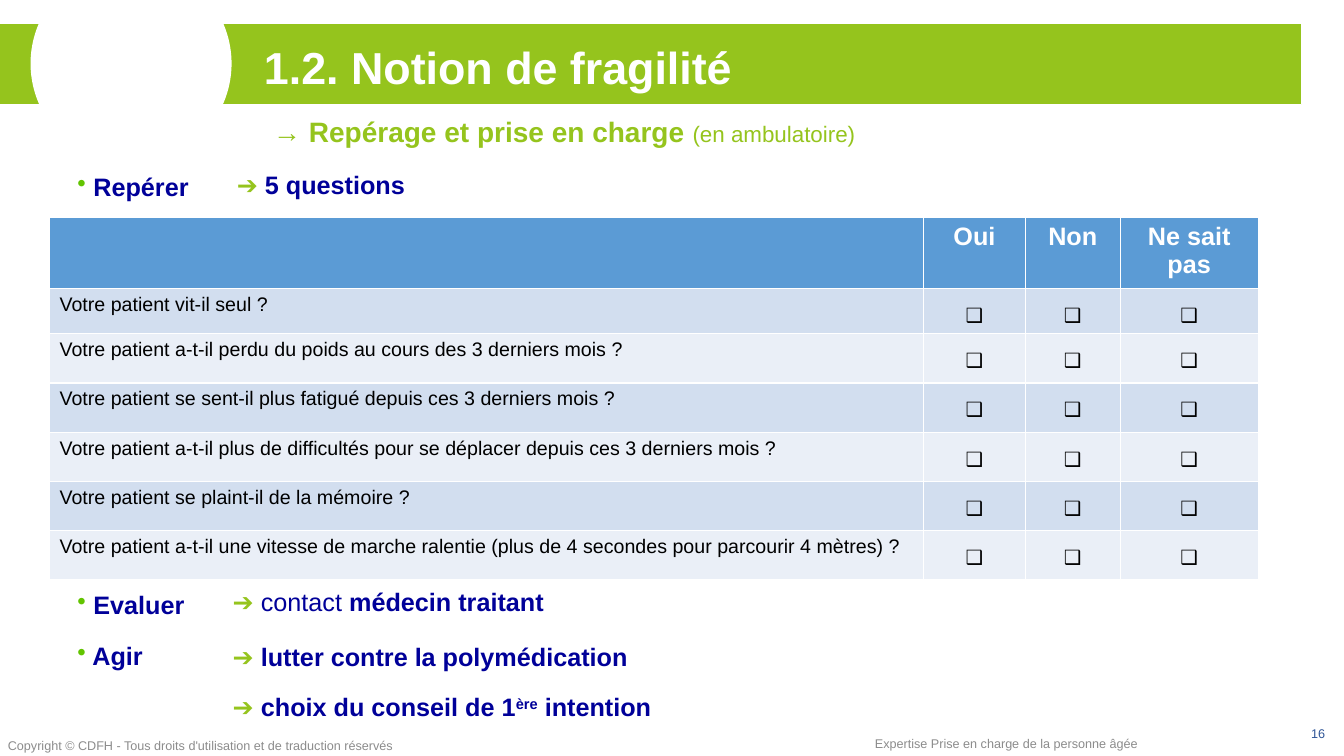
from pptx import Presentation
from pptx.dml.color import RGBColor
from pptx.enum.shapes import MSO_SHAPE
from pptx.enum.text import MSO_ANCHOR, PP_ALIGN
from pptx.oxml import parse_xml
from pptx.oxml.ns import nsdecls
from pptx.util import Inches, Pt

RECTANGLE, OVAL = MSO_SHAPE.RECTANGLE, MSO_SHAPE.OVAL
LEFT, CENTER, RIGHT = PP_ALIGN.LEFT, PP_ALIGN.CENTER, PP_ALIGN.RIGHT
TOP, MIDDLE = MSO_ANCHOR.TOP, MSO_ANCHOR.MIDDLE

WHITE = RGBColor(0xFF, 0xFF, 0xFF)
BLACK = RGBColor(0x00, 0x00, 0x00)
GREEN = RGBColor(0x95, 0xC4, 0x1D)
NAVY = RGBColor(0x00, 0x00, 0x99)
GREY = RGBColor(0x8C, 0x8C, 0x8C)
NUMBER_BLUE = RGBColor(0x2F, 0x55, 0x97)
HEADER_BLUE = RGBColor(0x5B, 0x9B, 0xD5)
ROW_BLUES = (RGBColor(0xD2, 0xDE, 0xEF), RGBColor(0xEA, 0xEF, 0xF7))
BULLET_GREEN = "62C400"

QUESTIONS = (
    "Votre patient vit-il seul ?",
    "Votre patient a-t-il perdu du poids au cours des 3 derniers mois ?",
    "Votre patient se sent-il plus fatigué depuis ces 3 derniers mois ?",
    "Votre patient a-t-il plus de difficultés pour se déplacer depuis ces 3 derniers mois ?",
    "Votre patient se plaint-il de la mémoire ?",
    "Votre patient a-t-il une vitesse de marche ralentie (plus de 4 secondes pour parcourir 4 mètres) ?",
)
ANSWERS = ("Oui", "Non", "Ne sait pas")
COLUMN_WIDTHS = (8.67, 1.01, 0.94, 1.37)
ROW_HEIGHTS = (0.48, 0.39, 0.49, 0.49, 0.49, 0.48, 0.49)


class SlideBuilder:
    """Draws styled elements on the current slide."""

    font_name = "Arial"

    def __init__(self, page):
        self.page = page

    def shape(self, kind, left, top, width, height, fill):
        shape = self.page.shapes.add_shape(
            kind, Inches(left), Inches(top), Inches(width), Inches(height))
        shape.shadow.inherit = False
        shape.fill.solid()
        shape.fill.fore_color.rgb = fill
        shape.line.color.rgb = WHITE
        shape.line.width = Pt(1)

    def span(self, para, text, size, color, bold=False, raised=False):
        run = para.add_run()
        run.text = text
        run.font.name = self.font_name
        run.font.size = Pt(size)
        run.font.bold = bold
        run.font.color.rgb = color
        if raised:
            run._r.get_or_add_rPr().set("baseline", "30000")

    def text(self, left, top, width, height, spans, align=LEFT, anchor=TOP,
             wrap=True, spacing=None):
        box = self.page.shapes.add_textbox(
            Inches(left), Inches(top), Inches(width), Inches(height))
        frame = box.text_frame
        frame.word_wrap = wrap
        frame.vertical_anchor = anchor
        para = frame.paragraphs[0]
        para.alignment = align
        para.line_spacing = spacing
        for span in spans:
            self.span(para, *span)
        return para

    def step(self, top, label):
        para = self.text(0.67, top, 1.6, 0.4, [(f" {label}", 18, NAVY, True)])
        properties = para._p.get_or_add_pPr()
        properties.set("marL", "0")
        properties.set("indent", "0")
        properties.append(parse_xml(
            f'<a:buClr {nsdecls("a")}><a:srgbClr val="{BULLET_GREEN}"/></a:buClr>'))
        properties.append(parse_xml(f'<a:buChar {nsdecls("a")} char="•"/>'))

    def action(self, left, top, *spans):
        self.text(left, top, 10.28, 0.4, [("➔", 18, GREEN, True), *spans])

    def cell(self, cell, text, fill, size, color, bold=False, align=LEFT, spacing=None):
        cell.fill.solid()
        cell.fill.fore_color.rgb = fill
        para = cell.text_frame.paragraphs[0]
        para.alignment = align
        para.line_spacing = spacing
        if text:
            self.span(para, text, size, color, bold)

    def questionnaire(self, left, top):
        table = self.page.shapes.add_table(
            len(ROW_HEIGHTS), len(COLUMN_WIDTHS), Inches(left), Inches(top),
            Inches(sum(COLUMN_WIDTHS)), Inches(sum(ROW_HEIGHTS))).table
        for column, width in zip(table.columns, COLUMN_WIDTHS):
            column.width = Inches(width)
        for row, height in zip(table.rows, ROW_HEIGHTS):
            row.height = Inches(height)
        for index, heading in enumerate(("", *ANSWERS)):
            self.cell(table.cell(0, index), heading, HEADER_BLUE, 18, WHITE, True, CENTER)
        for index, question in enumerate(QUESTIONS):
            fill = ROW_BLUES[index % 2]
            self.cell(table.cell(index + 1, 0), question, fill, 14, BLACK)
            for answer in range(1, len(ANSWERS) + 1):
                self.cell(table.cell(index + 1, answer), "❑", fill, 14, BLACK,
                          align=CENTER, spacing=1.5)


def main():
    deck = Presentation()
    deck.slide_width = Inches(13.33)
    deck.slide_height = Inches(7.5)
    builder = SlideBuilder(deck.slides.add_slide(deck.slide_layouts[6]))

    builder.shape(RECTANGLE, -0.02, 0.23, 12.93, 0.81, GREEN)
    builder.shape(OVAL, 0.31, -0.36, 1.98, 1.98, WHITE)
    builder.text(-0.02, 7.27, 6.67, 0.25, [
        ("Copyright © CDFH - Tous droits d'utilisation et de traduction réservés", 9, GREY)])
    builder.text(8.58, 7.25, 2.83, 0.25, [
        ("Expertise Prise en charge de la personne âgée", 9, GREY)], wrap=False)
    builder.text(12.75, 7.08, 0.49, 0.4, [("16", 9, NUMBER_BLUE)], RIGHT, MIDDLE)
    builder.text(2.52, 0.4, 10.17, 0.62, [
        ("1.2. Notion de fragilité", 32, WHITE, True)], spacing=0.9)
    builder.text(2.61, 1.09, 7.73, 0.44, [
        ("→ Repérage et prise en charge ", 20, GREEN, True),
        ("(en ambulatoire)", 16, GREEN)])

    builder.questionnaire(0.49, 2.16)

    for top, label in ((1.65, "Repérer"), (5.8, "Evaluer"), (6.3, "Agir")):
        builder.step(top, label)
    builder.action(2.25, 1.63, (" 5 questions", 18, NAVY, True))
    builder.action(2.21, 5.77, (" contact", 18, NAVY),
                   (" médecin traitant", 18, NAVY, True))
    builder.action(2.21, 6.31, (" lutter contre la polymédication", 18, NAVY, True))
    builder.action(2.21, 6.81, (" choix du conseil de 1", 18, NAVY, True),
                   ("ère", 18, NAVY, True, True), (" intention", 18, NAVY, True))

    deck.save("out.pptx")


if __name__ == "__main__":
    main()
